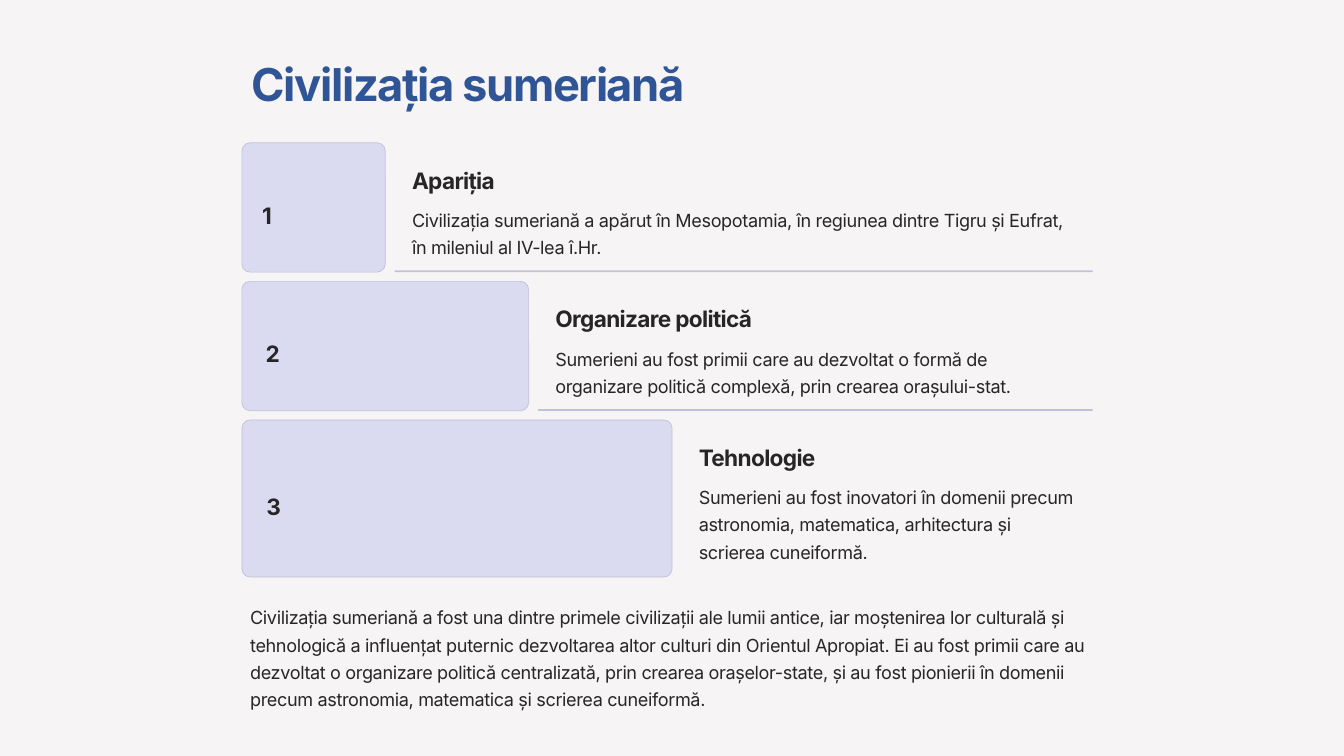
from dataclasses import dataclass

from pptx import Presentation
from pptx.dml.color import RGBColor
from pptx.enum.shapes import MSO_SHAPE as Shape
from pptx.enum.text import PP_ALIGN as Align
from pptx.util import Emu, Inches, Pt

SLIDE_W, SLIDE_H = Inches(16), Inches(9)
COLS, ROWS = 160, 90  # grid cells across and down the slide

LEFT, RIGHT = 28.8, 130.1
FIRST_TOP, GAP = 17, 1.1
STEP_COLS = 17.07
RADIUS = 0.97
INDENT = 2.2

PAPER, LILAC, EDGE = "F6F4F4", "DADBF1", "C0C1D7"
BLUE, INK = "2F5597", "272525"


@dataclass
class Step:
    heading: str
    body: str
    height: float
    body_height: float
    number_width: float


STEPS = [
    Step("Apariția",
         "Civilizația sumeriană a apărut în Mesopotamia, în regiunea dintre "
         "Tigru și Eufrat, în mileniul al IV-lea î.Hr.", 15.4, 6.5, 1.2),
    Step("Organizare politică",
         "Sumerieni au fost primii care au dezvoltat o formă de organizare "
         "politică complexă, prin crearea orașului-stat.", 15.4, 6.5, 1.6),
    Step("Tehnologie",
         "Sumerieni au fost inovatori în domenii precum astronomia, matematica, "
         "arhitectura și scrierea cuneiformă.", 18.7, 9.7, 1.7),
]
SUMMARY = (
    "Civilizația sumeriană a fost una dintre primele civilizații ale lumii antice, "
    "iar moștenirea lor culturală și tehnologică a influențat puternic dezvoltarea "
    "altor culturi din Orientul Apropiat. Ei au fost primii care au dezvoltat o "
    "organizare politică centralizată, prin crearea orașelor-state, și au fost "
    "pionierii în domenii precum astronomia, matematica și scrierea cuneiformă.")

BODY = dict(size=15.5, line=23.3, spacing=-0.3, wrap=True)
HEADING = dict(size=19.4, line=24.3, spacing=-0.6, bold=True)
NUMBER = HEADING | dict(line=29.1, align=Align.CENTER)
TITLE = dict(size=38.8, line=48.5, spacing=-1.2, bold=True,
             color=BLUE, align=Align.CENTER)


def rgb(value: str) -> RGBColor:
    return RGBColor.from_string(value)


def cells(x: float, y: float, w: float, h: float) -> tuple[Emu, ...]:
    """Turn grid columns and rows into slide lengths."""
    col, row = SLIDE_W / COLS, SLIDE_H / ROWS
    return Emu(round(x * col)), Emu(round(y * row)), Emu(round(w * col)), Emu(round(h * row))


def add_box(s, x: float, y: float, w: float, h: float, fill: str, *,
            radius: float = 0, edge: str | None = None) -> None:
    kind = Shape.ROUNDED_RECTANGLE if radius else Shape.RECTANGLE
    sp = s.shapes.add_shape(kind, *cells(x, y, w, h))
    sp.shadow.inherit = False
    sp.fill.solid()
    sp.fill.fore_color.rgb = rgb(fill)
    if radius:
        sp.adjustments[0] = radius / min(w, h)
    if edge:
        sp.line.color.rgb = rgb(edge)
        sp.line.width = Pt(0.6)
    else:
        sp.line.fill.background()


def add_text(s, text: str, x: float, y: float, w: float, h: float, *,
             size: float, line: float, spacing: float, bold: bool = False,
             color: str = INK, align: Align = Align.LEFT, wrap: bool = False) -> None:
    tf = s.shapes.add_textbox(*cells(x, y, w, h)).text_frame
    tf.word_wrap = wrap
    p = tf.paragraphs[0]
    p.alignment = align
    p.line_spacing = Pt(line)
    r = p.add_run()
    r.text = text
    r.font.name = "Inter"
    r.font.size = Pt(size)
    r.font.bold = bold
    r.font.color.rgb = rgb(color)
    r.font._element.set("spc", str(round(spacing * 100)))


def add_step(s, step: Step, number: int, top: float) -> None:
    width = number * STEP_COLS
    text_x = LEFT + width + INDENT
    add_box(s, LEFT, top, width, step.height, LILAC, radius=RADIUS, edge=EDGE)
    add_text(s, str(number), LEFT + INDENT, top + (step.height - 4) / 2,
             step.number_width, 4, **NUMBER)
    add_text(s, step.heading, text_x, top + 2.2, 27, 3.4, **HEADING)
    add_text(s, step.body, text_x, top + 6.8, RIGHT - 1.1 - text_x,
             step.body_height, **BODY)
    if number < len(STEPS):
        rule_x = LEFT + width + 1.1
        add_box(s, rule_x, top + step.height - 0.2, RIGHT - rule_x, 0.2, EDGE, radius=0.1)


def main() -> None:
    prs = Presentation()
    prs.slide_width, prs.slide_height = SLIDE_W, SLIDE_H
    s = prs.slides.add_slide(prs.slide_layouts[6])
    add_box(s, 0, 0, COLS, ROWS, PAPER)
    add_text(s, "Civilizația sumeriană", LEFT, 5.9, 53.9, 6.7, **TITLE)
    top = FIRST_TOP
    for number, step in enumerate(STEPS, 1):
        add_step(s, step, number, top)
        top += step.height + GAP
    add_text(s, SUMMARY, LEFT, 71.1, 102.4, 12.9, **BODY)
    prs.save("out.pptx")


if __name__ == "__main__":
    main()
